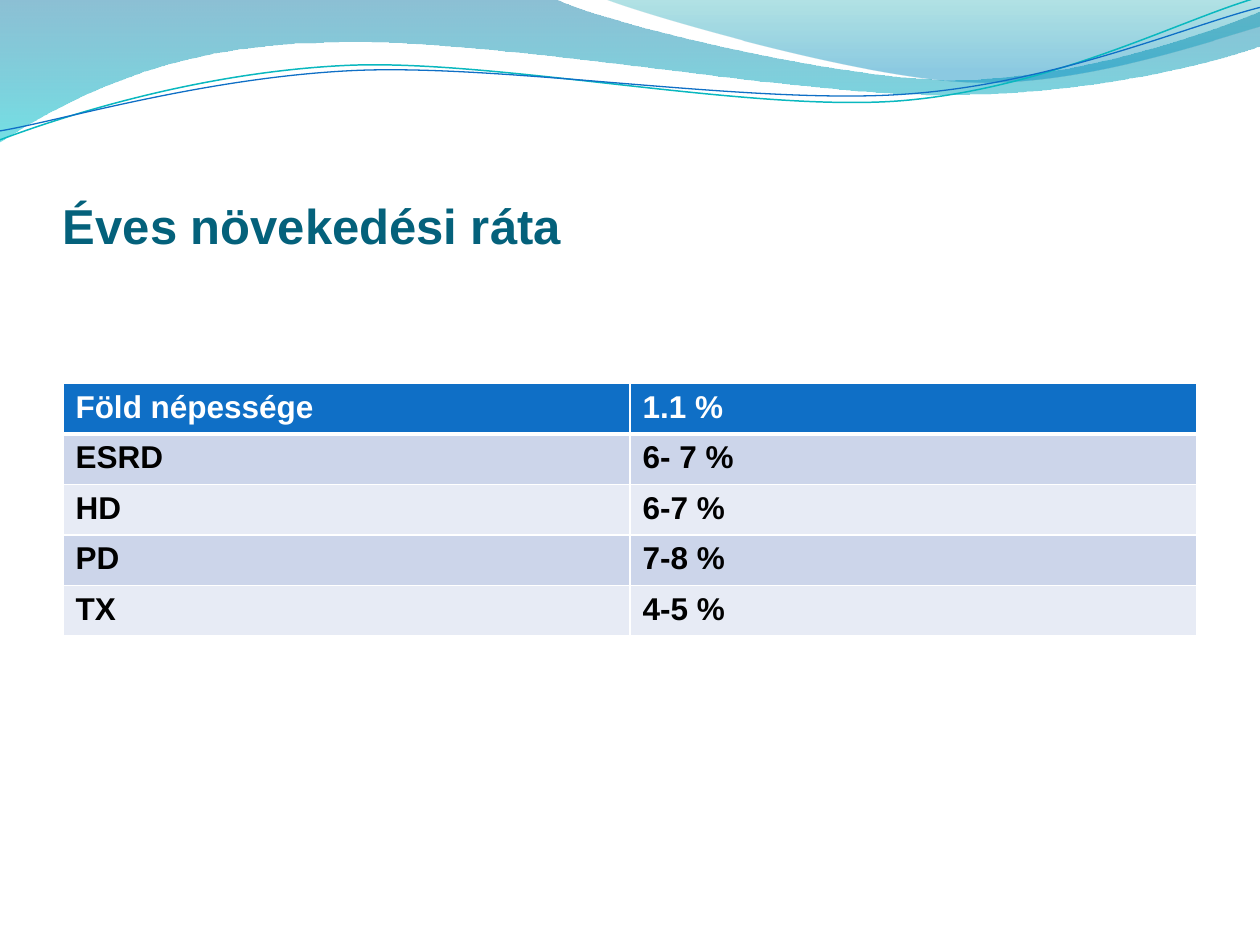
import itertools

import pptx
import pptx.dml.color
import pptx.enum.text
import pptx.oxml.ns
import pptx.util
from lxml import etree

Cm = pptx.util.Cm
Pt = pptx.util.Pt
RGBColor = pptx.dml.color.RGBColor
qn = pptx.oxml.ns.qn

WHITE = RGBColor(0xFF, 0xFF, 0xFF)
BLACK = RGBColor(0x00, 0x00, 0x00)
TITLE = RGBColor(0x04, 0x61, 0x7B)
BLUE = RGBColor(0x0F, 0x6F, 0xC6)
TEAL = RGBColor(0x0A, 0xB8, 0xBF)
BANDS = [RGBColor(0xE7, 0xEB, 0xF5), RGBColor(0xCC, 0xD5, 0xEA)]
DEEP = RGBColor(0x00, 0x74, 0xA1)
AQUA = RGBColor(0x00, 0xC6, 0xCF)
GREEN = RGBColor(0x00, 0xA1, 0xA9)
SKY = RGBColor(0x00, 0x8B, 0xBF)


def trace(start, parts, close):
    """Draw a path in cm; a part is an end point or a cubic curve."""
    pen = slide.shapes.build_freeform(Cm(start[0]), Cm(start[1]))
    pen.add_line_segments([(Cm(x), Cm(y)) for part in parts
                           for x, y in zip(part[::2], part[1::2])], close=close)
    shape = pen.convert_to_shape()
    shape.shadow.inherit = False
    # Join each three points of a curve into one cubic segment
    legs = iter(list(shape._element.iter(qn("a:lnTo"))))
    for part in parts:
        trio = list(itertools.islice(legs, len(part) // 2))
        if len(trio) == 3:
            cubic = etree.Element(qn("a:cubicBezTo"))
            trio[0].addprevious(cubic)
            for leg in trio:
                cubic.append(leg[0])
                leg.getparent().remove(leg)
    return shape


def style(thing, form):
    """Set format values from a dict."""
    for key, val in form.items():
        if key == "color":
            thing.color.rgb = val
        else:
            setattr(thing, key, val)


deck = pptx.Presentation()
deck.slide_width, deck.slide_height = Cm(25.4), Cm(19.05)
slide = deck.slides.add_slide(deck.slide_layouts[6])

# Waves: start, parts, gradient stops (place, colour, opacity in %)
waves = [
    ((0, -0.03),
     [(11.18, -0.03), (12.09, 0.43, 16.87, 1.6, 19.25, 1.6),
      (21.67, 1.6, 24.33, 0.66, 25.4, 0.23), (25.43, 0.91),
      (24.97, 1.12, 22.1, 1.93, 18.95, 1.91),
      (15.8, 1.91, 9.7, 0.71, 6.53, 0.86),
      (3.28, 0.89, 1.17, 2.11, -0.03, 2.87)],
     [(0, DEEP, 45), (1, AQUA, 55)]),
    ((12.17, -0.03),
     [(12.93, 0.28, 17.32, 1.57, 19.53, 1.65),
      (21.74, 1.75, 24.41, 0.81, 25.4, 0.53), (25.4, 0)],
     [(0, GREEN, 30), (0.8, SKY, 45)]),
]
for start, parts, stops in waves:
    wave = trace(start, parts, True)
    wave.line.fill.background()
    wave.fill.gradient()
    wave.fill.gradient_angle = 270
    for stop, (place, color, _) in zip(wave.fill.gradient_stops, stops):
        stop.position = place
        stop.color.rgb = color
    tints = wave._element.spPr.iter(qn("a:srgbClr"))
    for tint, (_, _, alpha) in zip(tints, stops):
        etree.SubElement(tint, qn("a:alpha"), val=str(alpha * 1000))

# Thin tilted curves along the waves
curves = [
    ((-0.05, 2.22),
     [(1.19, 1.82, 4.02, 1.04, 7.05, 1.05),
      (10.05, 1.07, 15.02, 2.37, 18.08, 2.29),
      (21.13, 2.2, 23.86, 0.91, 25.41, 0.55)], TEAL, 0.85),
    ((-0.04, 2.04),
     [(1.16, 1.9, 4.17, 1.15, 7.2, 1.16),
      (10.25, 1.18, 15.13, 2.23, 18.19, 2.16),
      (21.21, 2.1, 23.93, 1.06, 25.45, 0.75)], BLUE, 0.75),
]
for start, parts, color, width in curves:
    curve = trace(start, parts, False)
    curve.rotation = 357.3
    curve.fill.background()
    style(curve.line, {"color": color, "width": Pt(width)})

# Title
box = slide.shapes.add_textbox(Cm(1.27), Cm(1.96), Cm(22.86), Cm(3.17))
frame = box.text_frame
style(frame, {"word_wrap": True,
              "vertical_anchor": pptx.enum.text.MSO_ANCHOR.BOTTOM,
              "margin_left": 0, "margin_right": 0,
              "margin_top": Cm(0.13), "margin_bottom": 0})
line = frame.paragraphs[0].add_run()
line.text = "Éves növekedési ráta"
style(line.font, {"name": "Arial", "size": Pt(28), "bold": True, "color": TITLE})

# Table of growth rates
rates = [
    ("Föld népessége", "1.1 %"),
    ("ESRD", "6- 7 %"),
    ("HD", "6-7 %"),
    ("PD", "7-8 %"),
    ("TX", "4-5 %"),
]
grid = slide.shapes.add_table(len(rates), 2, Cm(1.27), Cm(7.73),
                              Cm(22.86), Cm(5.08))
table = grid.table
for r, rate in enumerate(rates):
    table.rows[r].height = Cm(0.56)  # rows grow to fit their text
    for c, text in enumerate(rate):
        cell = table.cell(r, c)
        # White borders, thick between head and body
        props = cell._tc.get_or_add_tcPr()
        for side in "LRTB":
            thick = (r, side) in ((0, "B"), (1, "T"))
            edge = etree.SubElement(props, qn("a:ln" + side),
                                    w=str(int(Pt(3 if thick else 1))))
            paint = etree.SubElement(edge, qn("a:solidFill"))
            etree.SubElement(paint, qn("a:srgbClr"), val=str(WHITE))
        cell.fill.solid()
        cell.fill.fore_color.rgb = BANDS[r % 2] if r else BLUE
        run = cell.text_frame.paragraphs[0].add_run()
        run.text = text
        style(run.font, {"name": "Arial", "size": Pt(18), "bold": True,
                         "color": BLACK if r else WHITE})
grid.height = Cm(5.08)

deck.save("out.pptx")
